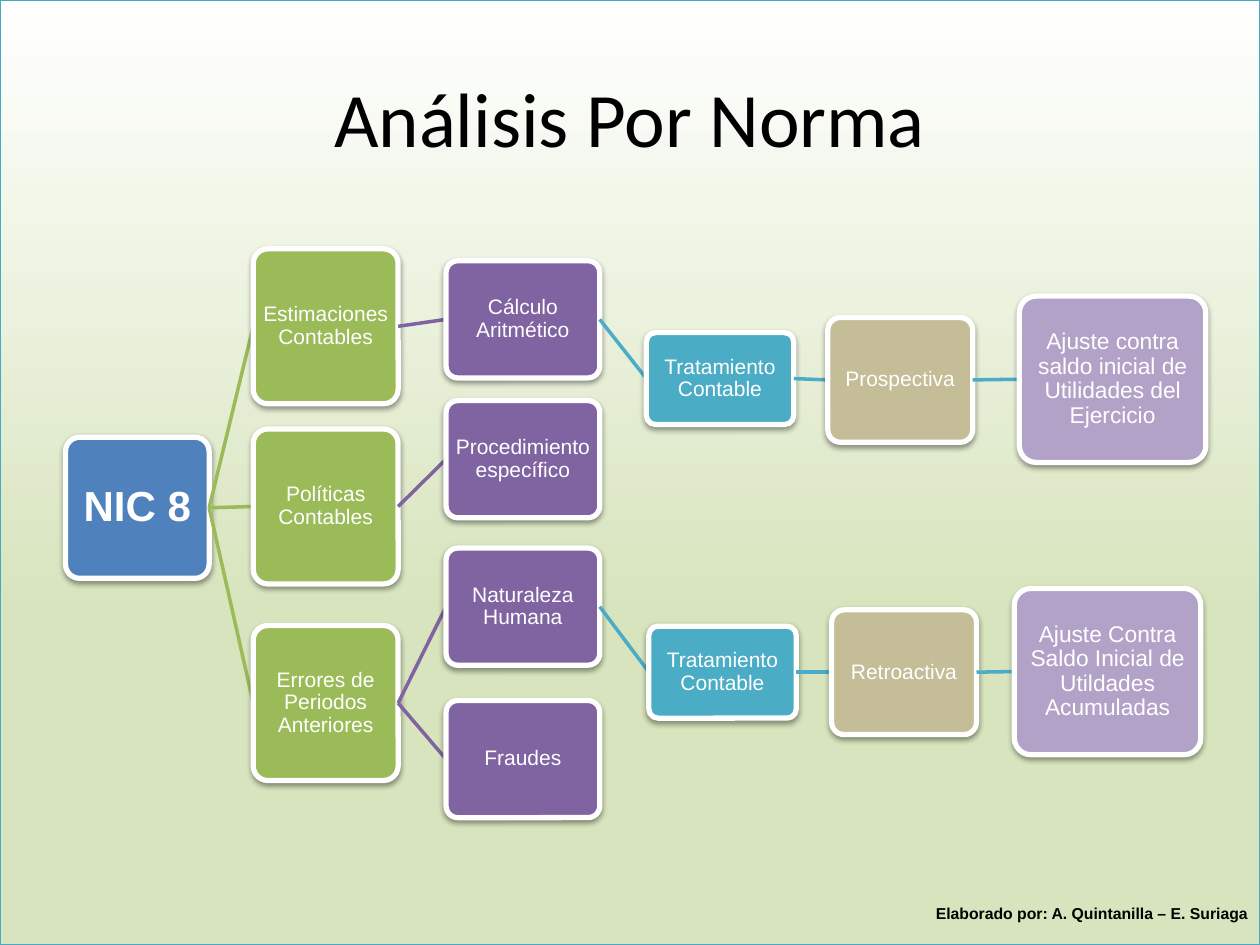
from lxml import etree
from pptx import Presentation
from pptx.dml.color import RGBColor
from pptx.enum.shapes import MSO_CONNECTOR, MSO_SHAPE
from pptx.enum.text import MSO_ANCHOR, PP_ALIGN
from pptx.oxml.ns import qn
from pptx.util import Inches, Pt

STRAIGHT = MSO_CONNECTOR.STRAIGHT
RECT, ROUNDED = MSO_SHAPE.RECTANGLE, MSO_SHAPE.ROUNDED_RECTANGLE
MIDDLE = MSO_ANCHOR.MIDDLE
CENTER, RIGHT = PP_ALIGN.CENTER, PP_ALIGN.RIGHT

COLUMNS, ROWS = 100, 75
CELL = Inches(10) // COLUMNS

# stage: width, height, fill, link colour, text size, bold
STAGES = {
    "norma": (11.4, 11.2, "4F81BD", None, 24, True),
    "tema": (11.5, 12.3, "9BBB59", "9BBB59", 12, False),
    "causa": (12.2, 9.3, "8064A2", "8064A2", 12, False),
    "tratamiento": (11.7, 7.3, "4BACC6", "4BACC6", 12, False),
    "aplicación": (11.5, 9.9, "C4BD97", "4BACC6", 12, False),
    "ajuste": (14.8, 13.2, "B3A2C7", "4BACC6", 13, False),
}

# node: stage, text, left column, middle row, children
PROSPECTIVE = ("tratamiento", "Tratamiento Contable", 51.3, 30.05, [
    ("aplicación", "Prospectiva", 65.7, 30.15, [
        ("ajuste", "Ajuste contra saldo inicial de Utilidades del Ejercicio",
         80.9, 30.1, [])])])
RETROACTIVE = ("tratamiento", "Tratamiento Contable", 51.5, 53.35, [
    ("aplicación", "Retroactiva", 66, 53.35, [
        ("ajuste", "Ajuste Contra Saldo Inicial de Utildades Acumuladas",
         80.5, 53.3, [])])])
TREE = ("norma", "NIC 8", 5.2, 40.3, [
    ("tema", "Estimaciones Contables", 20.1, 25.9, [
        ("causa", "Cálculo Aritmético", 35.4, 25.35, [PROSPECTIVE])]),
    ("tema", "Políticas Contables", 20.1, 40.2, [
        ("causa", "Procedimiento específico", 35.4, 36.45, [])]),
    ("tema", "Errores de Periodos Anteriores", 20.1, 55.8, [
        ("causa", "Naturaleza Humana", 35.4, 48.15, [RETROACTIVE]),
        ("causa", "Fraudes", 35.4, 60.25, [])]),
])


def grid(*cells):
    return [round(cell * CELL) for cell in cells]


def color(hex_code):
    return RGBColor.from_string(hex_code)


def outline(shape, hex_code, points):
    shape.line.color.rgb = color(hex_code)
    shape.line.width = Pt(points)


def add_shadow(shape):
    shape.shadow.inherit = False
    effects = shape.element.spPr.find(qn("a:effectLst"))
    shadow = etree.SubElement(effects, qn("a:outerShdw"), blurRad="40000",
                              dist="20000", dir="5400000", rotWithShape="0")
    black = etree.SubElement(shadow, qn("a:srgbClr"), val="000000")
    etree.SubElement(black, qn("a:alpha"), val="38000")


def write(shape, text, size, font, hex_code, align, bold=False, wrap=True):
    frame = shape.text_frame
    frame.word_wrap = wrap
    frame.vertical_anchor = MIDDLE
    paragraph = frame.paragraphs[0]
    paragraph.alignment = align
    run = paragraph.add_run()
    run.text = text
    run.font.name, run.font.size, run.font.bold = font, Pt(size), bold
    run.font.color.rgb = color(hex_code)
    return frame


def add_backdrop(slide):
    backdrop = slide.shapes.add_shape(RECT, *grid(0, 0, COLUMNS, ROWS))
    backdrop.fill.gradient()
    backdrop.fill.gradient_angle = 90
    green, white = backdrop.fill.gradient_stops
    green.position, green.color.rgb = 0.35, color("D7E4BD")
    white.position, white.color.rgb = 1, color("FFFFFF")
    outline(backdrop, "46AAC5", 0.75)
    add_shadow(backdrop)


def add_label(slide, cells, *style, **options):
    label = slide.shapes.add_textbox(*grid(*cells))
    write(label, *style, **options)


def add_link(slide, start, end, hex_code):
    link = slide.shapes.add_connector(STRAIGHT, *grid(*start, *end))
    outline(link, hex_code, 2)
    etree.SubElement(link.element.spPr, qn("a:effectLst"))


def add_branch(slide, node, origin=None):
    stage, text, left, middle, children = node
    width, height, fill, link_color, size, bold = STAGES[stage]
    if origin:
        add_link(slide, origin, (left, middle), link_color)
    box = slide.shapes.add_shape(
        ROUNDED, *grid(left, middle - height / 2, width, height))
    box.adjustments[0] = 0.1
    box.fill.solid()
    box.fill.fore_color.rgb = color(fill)
    outline(box, "FFFFFF", 3)
    add_shadow(box)
    frame = write(box, text, size, "Arial", "FFFFFF", CENTER, bold)
    frame.margin_left = frame.margin_right = Inches(0.01)
    frame.margin_top = frame.margin_bottom = Inches(0.01)
    frame.paragraphs[0].line_spacing = 0.9
    for child in children:
        add_branch(slide, child, (left + width, middle))


def main():
    deck = Presentation()
    deck.slide_width, deck.slide_height = grid(COLUMNS, ROWS)
    slide = deck.slides.add_slide(deck.slide_layouts[6])
    add_backdrop(slide)
    add_label(slide, (5, 3, 90, 12.5), "Análisis Por Norma",
              44, "Calibri", "000000", CENTER)
    add_branch(slide, TREE)
    add_label(slide, (72.9, 71.2, 27.1, 2.5),
              "Elaborado por: A. Quintanilla – E. Suriaga",
              9, "Arial", "000000", RIGHT, bold=True, wrap=False)
    deck.save("out.pptx")


if __name__ == "__main__":
    main()
